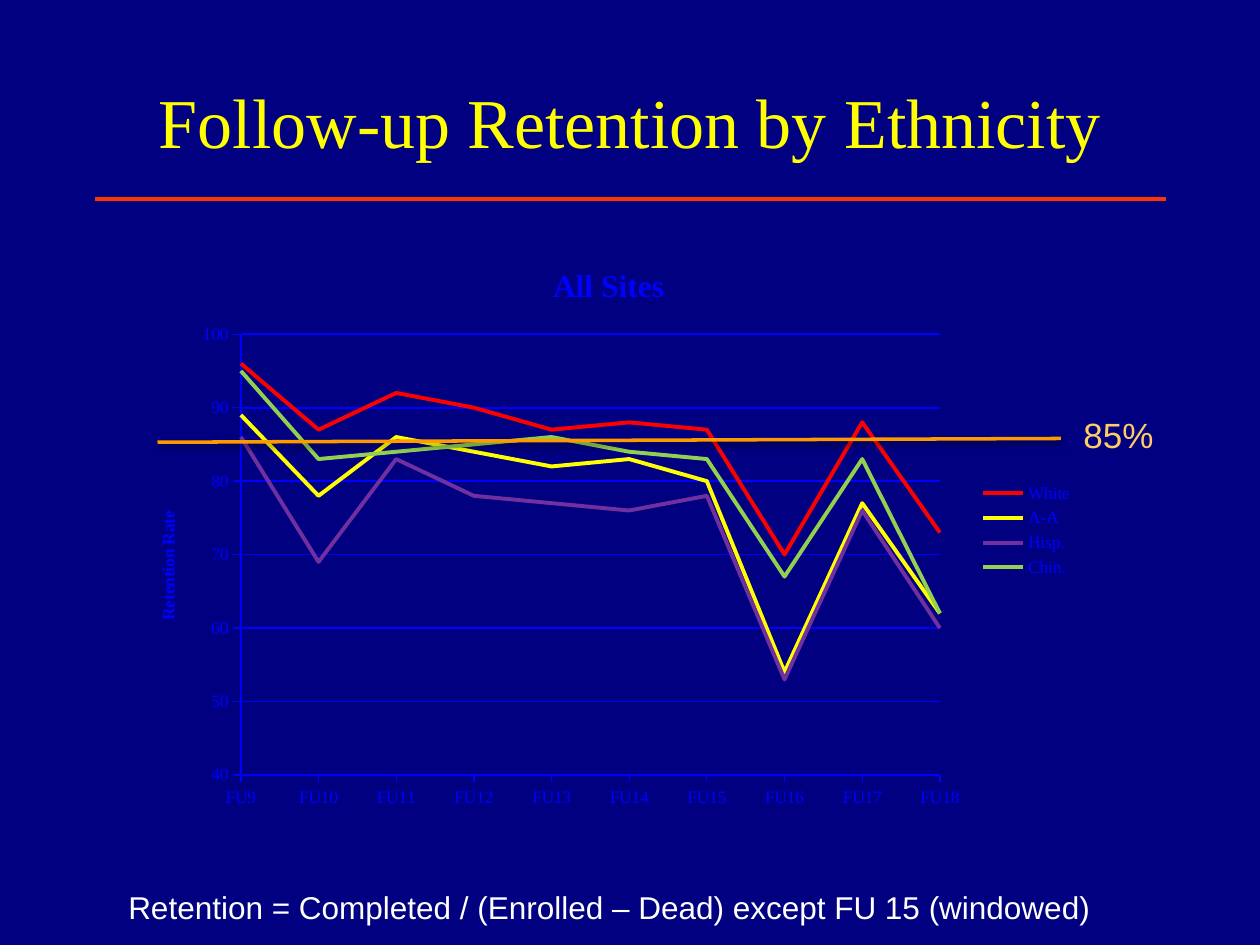
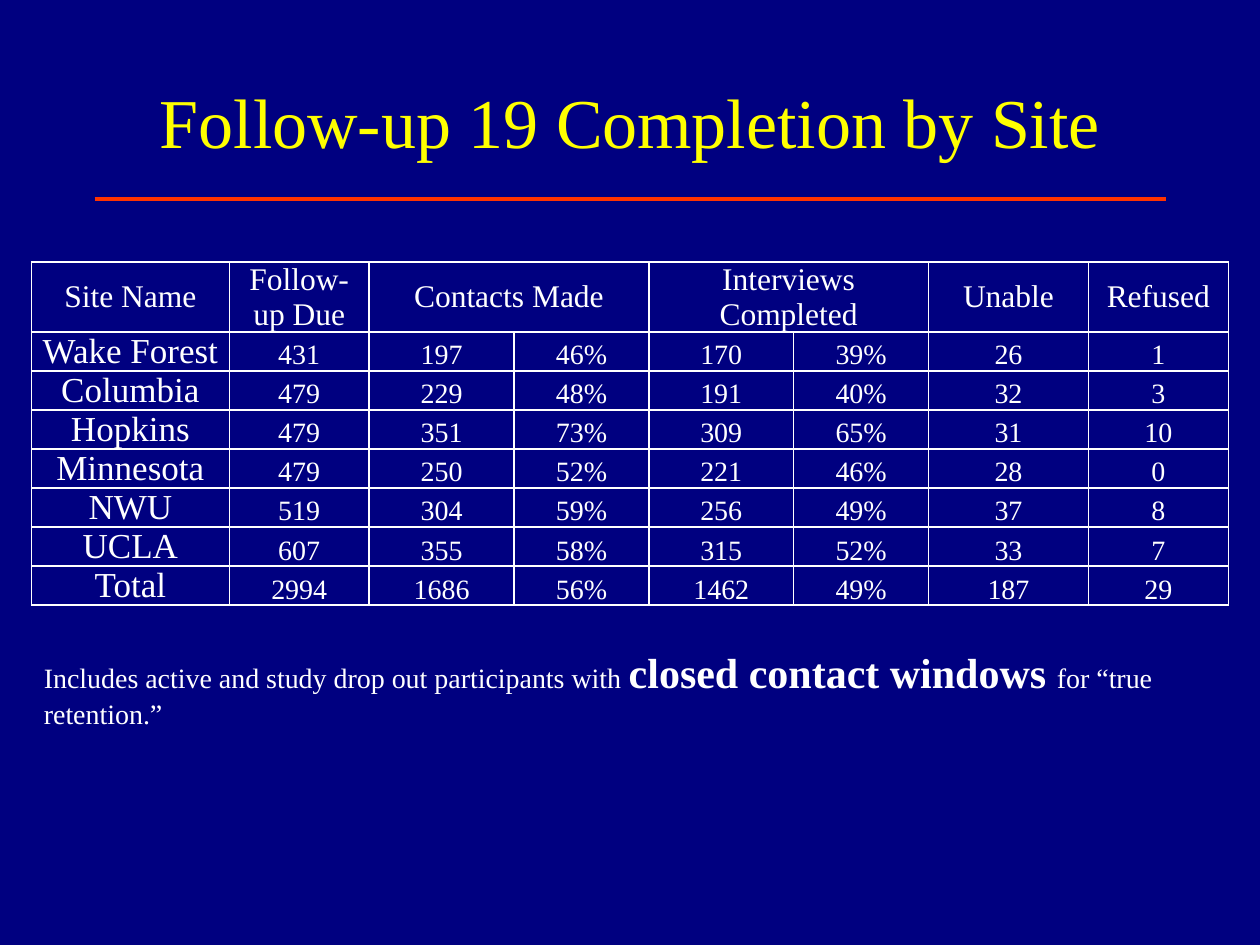
from lxml.etree import Element, SubElement
from pptx import Presentation
from pptx.chart.data import CategoryChartData
from pptx.dml.color import RGBColor
from pptx.enum.chart import XL_CHART_TYPE as ChartType
from pptx.enum.chart import XL_LEGEND_POSITION as LegendPosition
from pptx.enum.chart import XL_TICK_MARK as TickMark
from pptx.enum.shapes import MSO_CONNECTOR as Connector
from pptx.enum.text import MSO_ANCHOR as Anchor
from pptx.enum.text import PP_ALIGN as Align
from pptx.oxml.ns import qn
from pptx.util import Inches, Pt

SERIF, SANS = "Times New Roman", "Arial"
NAVY, YELLOW, WHITE = "000080", "FFFF00", "FFFFFF"
RULE_RED, TARGET_ORANGE, TARGET_LABEL, CHART_BLUE = "FF3300", "FF9900", "FFCC66", "0000FF"

VISITS = [f"FU{number}" for number in range(9, 19)]
RETENTION = [
    ("White", "FF0000", (96, 87, 92, 90, 87, 88, 87, 70, 88, 73)),
    ("A-A", YELLOW, (89, 78, 86, 84, 82, 83, 80, 54, 77, 62)),
    ("Hisp.", "7030A0", (86, 69, 83, 78, 77, 76, 78, 53, 76, 60)),
    ("Chin.", "92D050", (95, 83, 84, 85, 86, 84, 83, 67, 83, 62)),
]

COLUMN_WIDTHS = (1.57, 1.11, 1.15, 1.07, 1.15, 1.07, 1.27, 1.11)
HEADINGS = [(0, 0, "Site Name"), (1, 1, "Follow-up Due"), (2, 3, "Contacts Made"),
            (4, 5, "Interviews Completed"), (6, 6, "Unable"), (7, 7, "Refused")]
SITES = [
    ("Wake Forest", "431", "197", "46%", "170", "39%", "26", "1"),
    ("Columbia", "479", "229", "48%", "191", "40%", "32", "3"),
    ("Hopkins", "479", "351", "73%", "309", "65%", "31", "10"),
    ("Minnesota", "479", "250", "52%", "221", "46%", "28", "0"),
    ("NWU", "519", "304", "59%", "256", "49%", "37", "8"),
    ("UCLA", "607", "355", "58%", "315", "52%", "33", "7"),
    ("Total", "2994", "1686", "56%", "1462", "49%", "187", "29"),
]


def color(value):
    """Turn a hex string into a colour."""
    return RGBColor.from_string(value)


def style_font(font, size, ink, face=SERIF, bold=False):
    """Set the face, size, weight and colour of a font."""
    font.name, font.size, font.bold = face, Pt(size), bold
    font.color.rgb = color(ink)


def style_line(line, ink, width):
    """Set the colour and width of a line."""
    line.color.rgb = color(ink)
    line.width = Pt(width)


def add_run(paragraph, text, size, ink, face=SERIF, bold=False):
    """Add one formatted run to a paragraph."""
    run = paragraph.add_run()
    run.text = text
    style_font(run.font, size, ink, face, bold)


def add_line(slide, start, end, ink, shadow=False):
    """Draw a straight 2 pt line, with a soft shadow below it if asked."""
    line = slide.shapes.add_connector(Connector.STRAIGHT, *map(Inches, start + end))
    style_line(line.line, ink, 2)
    effects = SubElement(line._element.spPr, qn("a:effectLst"))
    if shadow:
        outer = SubElement(effects, qn("a:outerShdw"), blurRad=str(Pt(3.1)),
                           dist=str(Pt(1.6)), dir="5400000", rotWithShape="0")
        black = SubElement(outer, qn("a:srgbClr"), val="000000")
        SubElement(black, qn("a:alpha"), val="38000")


def add_note(slide, box, runs):
    """Add a wrapping text box with a single paragraph of runs."""
    frame = slide.shapes.add_textbox(*map(Inches, box)).text_frame
    frame.word_wrap = True
    for run in runs:
        add_run(frame.paragraphs[0], *run)


def add_titled_slide(prs, heading):
    """Add a slide with the shared title style and the red rule."""
    slide = prs.slides.add_slide(prs.slide_layouts[5])
    title = slide.shapes.title
    title.left, title.top, title.width, title.height = map(Inches, (0.75, 0.33, 8.5, 1.25))
    title.text_frame.vertical_anchor = Anchor.MIDDLE
    paragraph = title.text_frame.paragraphs[0]
    paragraph.alignment = Align.CENTER
    add_run(paragraph, heading, 40, YELLOW)
    add_line(slide, (0.75, 1.58), (9.25, 1.58), RULE_RED)
    return slide


def place_plot(chart, **fractions):
    """Fix the inner plot area as fractions of the chart."""
    plot_area = chart._chartSpace.xpath("c:chart/c:plotArea")[0]
    for old in plot_area.findall(qn("c:layout")):
        plot_area.remove(old)
    layout = Element(qn("c:layout"))
    plot_area.insert(0, layout)
    manual = SubElement(layout, qn("c:manualLayout"))
    settings = {"layoutTarget": "inner", "xMode": "edge", "yMode": "edge", **fractions}
    for tag, value in settings.items():
        SubElement(manual, qn(f"c:{tag}"), val=str(value))


def start_on_axis(value_axis):
    """Let the first category sit on the value axis."""
    axis = value_axis._element
    for old in axis.findall(qn("c:crossBetween")):
        axis.remove(old)
    axis.find(qn("c:crosses")).addnext(Element(qn("c:crossBetween"), val="midCat"))


def add_retention_chart(slide):
    """Add the line chart of retention by ethnicity."""
    data = CategoryChartData()
    data.categories = VISITS
    for group, _, rates in RETENTION:
        data.add_series(group, rates)
    box = map(Inches, (1.04, 1.92, 7.58, 4.58))
    chart = slide.shapes.add_chart(ChartType.LINE, *box, data).chart
    style_font(chart.font, 10, CHART_BLUE)
    chart.has_title = True
    add_run(chart.chart_title.text_frame.paragraphs[0], "All Sites", 18, CHART_BLUE, bold=True)
    chart.has_legend = True
    chart.legend.position = LegendPosition.RIGHT
    chart.legend.include_in_layout = False

    rate_axis = chart.value_axis
    for axis in (chart.category_axis, rate_axis):
        axis.major_tick_mark = TickMark.OUTSIDE
        style_line(axis.format.line, CHART_BLUE, 0.75)
    rate_axis.minimum_scale, rate_axis.maximum_scale, rate_axis.major_unit = 40, 100, 10
    rate_axis.has_major_gridlines = True
    style_line(rate_axis.major_gridlines.format.line, CHART_BLUE, 1)
    rate_title = rate_axis.axis_title.text_frame.paragraphs[0]
    add_run(rate_title, "Retention Rate", 10, CHART_BLUE, bold=True)
    start_on_axis(rate_axis)

    plot = chart.plots[0]
    plot.vary_by_categories = False
    for series, (_, ink, _) in zip(plot.series, RETENTION):
        series.smooth = False
        style_line(series.format.line, ink, 2.25)
    place_plot(chart, x=0.115, y=0.16, w=0.732, h=0.764)


def format_cell(cell):
    """Give a cell white borders and no fill."""
    properties = cell._tc.get_or_add_tcPr()
    for side in ("lnL", "lnR", "lnT", "lnB"):
        border = SubElement(properties, qn(f"a:{side}"), w=str(Pt(1)))
        fill = SubElement(border, qn("a:solidFill"))
        SubElement(fill, qn("a:srgbClr"), val=WHITE)
    cell.fill.background()


def write_cell(cell, text, size, anchor=Anchor.MIDDLE, side_margin=0.07):
    """Write centred white text into a cell."""
    cell.vertical_anchor = anchor
    cell.margin_left = cell.margin_right = Inches(side_margin)
    cell.margin_top = cell.margin_bottom = 0
    paragraph = cell.text_frame.paragraphs[0]
    paragraph.alignment = Align.CENTER
    add_run(paragraph, text, size, WHITE)


def add_site_table(slide):
    """Add the table of follow-up completion by site."""
    box = map(Inches, (0.25, 2.08, 9.5, 2.72))
    table = slide.shapes.add_table(len(SITES) + 1, len(COLUMN_WIDTHS), *box).table
    table.first_row = table.horz_banding = False
    for column, width in zip(table.columns, COLUMN_WIDTHS):
        column.width = Inches(width)
    for index, row in enumerate(table.rows):
        row.height = Inches(0.31 if index else 0.55)
    for cell in table.iter_cells():
        format_cell(cell)
    for first, last, heading in HEADINGS:
        if last > first:
            table.cell(0, first).merge(table.cell(0, last))
        write_cell(table.cell(0, first), heading, 18)
    for row, (site, *counts) in enumerate(SITES, 1):
        write_cell(table.cell(row, 0), site, 20)
        for column, count in enumerate(counts, 1):
            write_cell(table.cell(row, column), count, 16, Anchor.BOTTOM, 0)


def build_ethnicity_slide(prs):
    """Build the slide on retention by ethnicity."""
    slide = add_titled_slide(prs, "Follow-up Retention by Ethnicity")
    add_retention_chart(slide)
    definition = "Retention = Completed / (Enrolled – Dead) except FU 15 (windowed)"
    add_note(slide, (0.92, 7, 8.5, 0.4), [(definition, 18, WHITE, SANS)])
    add_note(slide, (8.5, 3.23, 1, 0.44), [("85%", 20, TARGET_LABEL, SANS)])
    add_line(slide, (1.25, 3.51), (8.42, 3.48), TARGET_ORANGE, shadow=True)


def build_site_slide(prs):
    """Build the slide on completion by site."""
    slide = add_titled_slide(prs, "Follow-up 19 Completion by Site")
    add_site_table(slide)
    add_note(slide, (0.25, 5.08, 9.5, 0.77), [
        ("Includes active and study drop out participants with ", 16, WHITE),
        ("closed contact windows ", 24, WHITE, SERIF, True),
        ("for “true retention.”", 16, WHITE),
    ])


def main():
    """Build and save the presentation."""
    prs = Presentation()
    prs.slide_width, prs.slide_height = Inches(10), Inches(7.5)
    background = prs.slide_master.background.fill
    background.solid()
    background.fore_color.rgb = color(NAVY)
    build_ethnicity_slide(prs)
    build_site_slide(prs)
    prs.save("out.pptx")


if __name__ == "__main__":
    main()
